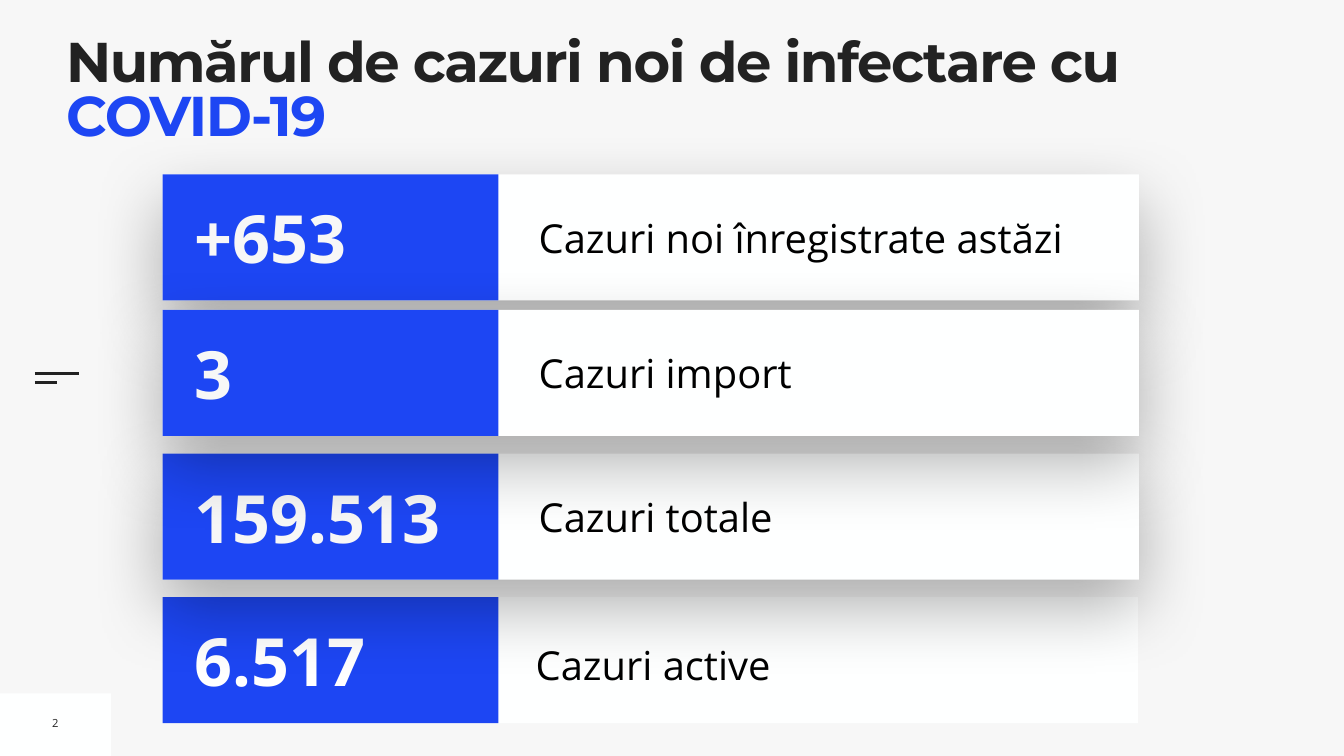
from dataclasses import dataclass

from lxml.etree import SubElement
from pptx import Presentation
from pptx.dml.color import RGBColor as RGB
from pptx.enum.shapes import MSO_CONNECTOR as CONN, MSO_SHAPE as SHAPE
from pptx.enum.text import MSO_ANCHOR as ANCHOR, MSO_AUTO_SIZE as FIT, PP_ALIGN as ALIGN
from pptx.oxml.ns import qn
from pptx.util import Inches, Pt


@dataclass(frozen=True)
class Theme:
    paper: RGB = RGB.from_string("F7F7F7")
    card: RGB = RGB.from_string("FEFFFF")
    accent: RGB = RGB.from_string("1D46F3")
    ink: RGB = RGB.from_string("222222")
    black: RGB = RGB.from_string("000000")
    white: RGB = RGB.from_string("FFFFFF")
    heading: str = "Montserrat"
    body: str = "Open Sans"
    title_size: int = 80
    value_size: int = 95
    label_size: int = 57
    number_size: int = 16


T = Theme()
SLIDE_W, SLIDE_H = 26.67, 15
# Columns and row height of the figures grid, in inches
CARD_X, CARD_W, ROW_H = 3.23, 19.37, 2.5
ACCENT_W = 6.66
VALUE_X, VALUE_W, VALUE_H = 3.76, 6.03, 1.8
LABEL_X, LABEL_W, LABEL_H = 10.59, 11.76, 1.16

# Top, value, label; later rows cast their shadow on earlier ones
ROWS = [
    (9, "159.513", "Cazuri totale"),
    (3.46, "+653", "Cazuri noi înregistrate astăzi"),
    (6.15, "3", "Cazuri import"),
]


def box(*lengths):
    return [Inches(n) for n in lengths]


def effect_list(sp):
    return SubElement(sp._element.spPr, qn("a:effectLst"))


def add_shadow(sp, blur=100, distance=40, opacity=30):
    """Cast a soft black shadow straight down; lengths in points."""
    effects = sp._element.spPr.find(qn("a:effectLst"))
    shadow = SubElement(effects, qn("a:outerShdw"), blurRad=str(Pt(blur)),
                        dist=str(Pt(distance)), dir="5400000", rotWithShape="0")
    color = SubElement(shadow, qn("a:srgbClr"), val=str(T.black))
    SubElement(color, qn("a:alpha"), val=str(opacity * 1000))


def add_rect(shapes, bounds, color):
    sp = shapes.add_shape(SHAPE.RECTANGLE, *box(*bounds))
    sp.shadow.inherit = False
    sp.fill.solid()
    sp.fill.fore_color.rgb = color
    sp.line.fill.background()
    return sp


def style_font(font, name, size, color, bold=False):
    font.name, font.size, font.bold = name, Pt(size), bold
    font.color.rgb = color


def set_insets(tf, inset):
    tf.margin_left = tf.margin_top = tf.margin_right = tf.margin_bottom = Inches(inset)


def add_text(shapes, bounds, text, size, color, bold=False, inset=0.1, wrap=True):
    tf = shapes.add_textbox(*box(*bounds)).text_frame
    tf.word_wrap = wrap
    tf.vertical_anchor = ANCHOR.MIDDLE
    set_insets(tf, inset)
    p = tf.paragraphs[0]
    p.text = text
    style_font(p.font, T.body, size, color, bold)
    return p


def add_rule(s, x, y, width):
    line = s.shapes.add_connector(CONN.STRAIGHT, *box(x, y, x + width, y))
    line.line.color.rgb = T.ink
    line.line.width = Pt(3)
    effect_list(line)


def add_title(s, parts):
    title = s.shapes.title
    title.left, title.top, title.width, title.height = box(1.31, 0.78, 23.94, 1.58)
    tf = title.text_frame
    tf.auto_size = FIT.NONE
    tf.word_wrap = True
    tf.vertical_anchor = ANCHOR.TOP
    set_insets(tf, 0)
    p = tf.paragraphs[0]
    p.alignment = ALIGN.LEFT
    p.line_spacing = 0.8
    for text, color in parts:
        r = p.add_run()
        r.text = text
        style_font(r.font, T.heading, T.title_size, color, bold=True)
        r.font._element.set("spc", "-200")


def add_row(s, top, value, label, card_w=CARD_W, shadow=True, value_color=T.paper,
            label_box=(LABEL_X, 0.67, LABEL_W, LABEL_H), label_inset=0.1):
    """Group a card, its accent block and both texts; label_box is relative to top."""
    shapes = s.shapes.add_group_shape().shapes
    card = add_rect(shapes, (CARD_X, top, card_w, ROW_H), T.card)
    if shadow:
        add_shadow(card)
    x, dy, w, h = label_box
    p = add_text(shapes, (x, top + dy, w, h), label, T.label_size, T.black, inset=label_inset)
    add_rect(shapes, (CARD_X, top, ACCENT_W, ROW_H), T.accent)
    value_y = top + (ROW_H - VALUE_H) / 2
    add_text(shapes, (VALUE_X, value_y, VALUE_W, VALUE_H), value, T.value_size,
             value_color, bold=True)
    return p


def add_page_marks(s):
    add_rect(s.shapes, (0, SLIDE_H - 1.24, 2.2, 1.24), T.card)
    add_rule(s, 0.69, 7.41, 0.88)
    add_rule(s, 0.69, 7.59, 0.44)
    p = add_text(s.shapes, (0.93, 14.09, 0.34, 0.51), "2", T.number_size, T.ink, wrap=False)
    p.alignment = ALIGN.CENTER


def main():
    prs = Presentation()
    prs.slide_width, prs.slide_height = box(SLIDE_W, SLIDE_H)
    s = prs.slides.add_slide(prs.slide_layouts[5])
    s.background.fill.solid()
    s.background.fill.fore_color.rgb = T.paper

    add_page_marks(s)
    add_title(s, [("Numărul de cazuri noi de infectare cu ", T.ink), ("COVID-19", T.accent)])
    active = add_row(s, 11.85, "6.517", "Cazuri active", card_w=19.35, shadow=False,
                     value_color=T.white, label_box=(10.63, 0.57, 11.58, 1.25), label_inset=0)
    active.line_spacing = 1.3
    for row in ROWS:
        add_row(s, *row)
    prs.save("out.pptx")


if __name__ == "__main__":
    main()
